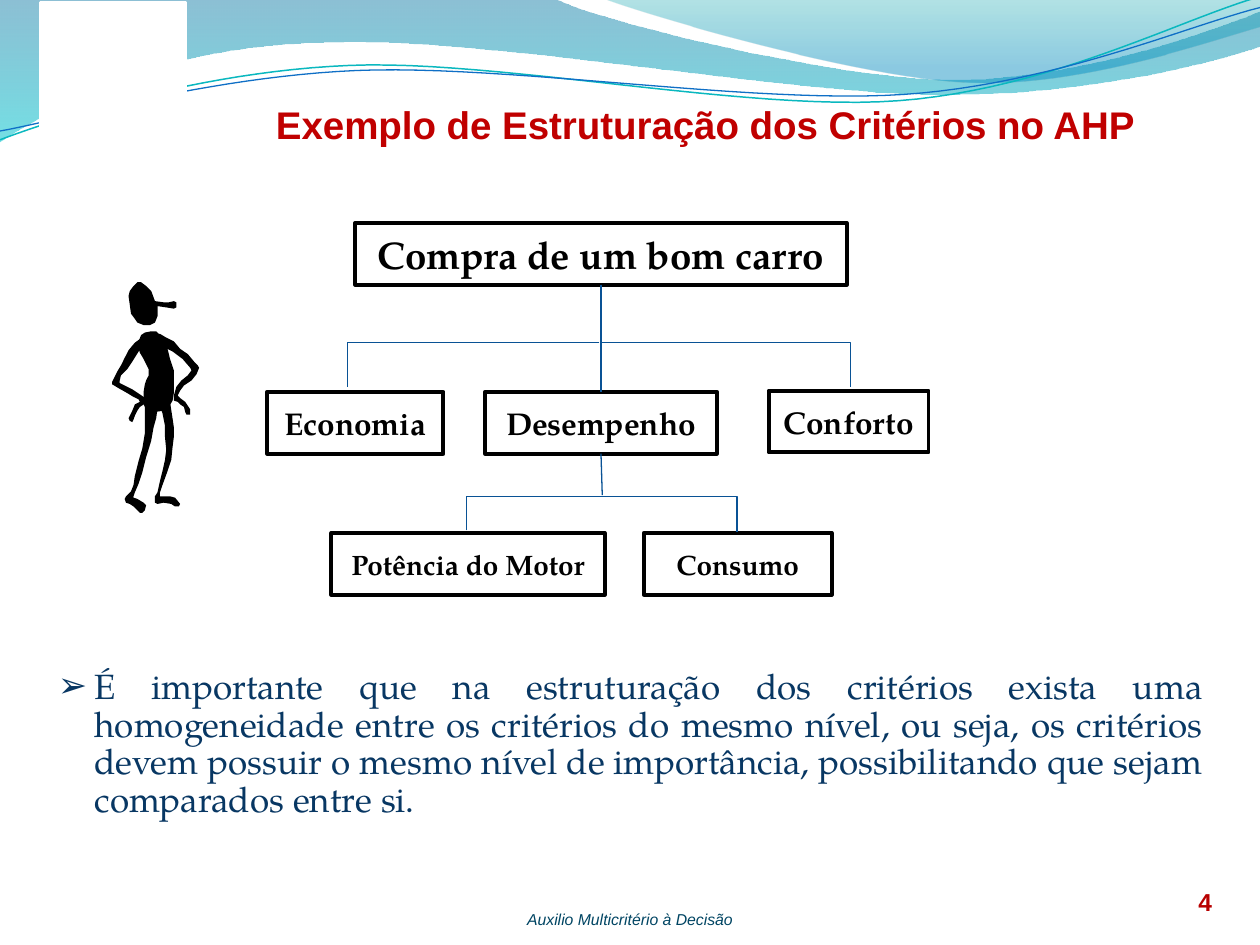
from lxml.etree import SubElement
from pptx import Presentation
from pptx.dml.color import RGBColor
from pptx.enum.shapes import MSO_CONNECTOR as CONNECTOR, MSO_SHAPE as SHAPE
from pptx.enum.text import MSO_ANCHOR as ANCHOR, MSO_AUTO_SIZE as AUTO_SIZE, PP_ALIGN as ALIGN
from pptx.oxml.ns import qn
from pptx.util import Inches, Pt

BLACK = RGBColor(0x00, 0x00, 0x00)
WHITE = RGBColor(0xFF, 0xFF, 0xFF)
RED = RGBColor(0xC0, 0x00, 0x00)
DARK_RED = RGBColor(0xB8, 0x00, 0x00)
NAVY = RGBColor(0x08, 0x37, 0x63)
FOOTER_BLUE = RGBColor(0x00, 0x45, 0x63)
LINK_BLUE = RGBColor(0x09, 0x52, 0x95)
TEAL_LINE = RGBColor(0x0A, 0xB8, 0xBF)
BLUE_LINE = RGBColor(0x0F, 0x6F, 0xC6)
# Gradient stops: position, colour, opacity in percent
WIDE_WAVE = [(0, RGBColor(0x00, 0x74, 0xA1), 45), (1, RGBColor(0x00, 0xC6, 0xCF), 55)]
SMALL_WAVE = [(0, RGBColor(0x00, 0xA1, 0xA9), 30), (0.8, RGBColor(0x00, 0x8B, 0xBF), 45)]
SANS, SERIF = "Arial", "TeX Gyre Pagella"
CURVE_STEPS = 24

# Each wave step is an end point, or two control points and an end point
WIDE_BAND = [(0, -0.01), (4.4, -0.01), (4.76, 0.17, 6.64, 0.63, 7.58, 0.63),
             (8.53, 0.63, 9.58, 0.26, 10, 0.09), (10.01, 0.36),
             (9.83, 0.44, 8.7, 0.76, 7.46, 0.75), (6.22, 0.75, 3.82, 0.28, 2.57, 0.34),
             (1.29, 0.35, 0.46, 0.83, -0.01, 1.13)]
SMALL_BAND = [(4.79, -0.01), (5.09, 0.11, 6.82, 0.62, 7.69, 0.65),
              (8.56, 0.69, 9.61, 0.32, 10, 0.21), (10, 0)]
TEAL_WAVE = [(0, 1.11), (0.48, 0.93, 1.58, 0.57, 2.77, 0.52),
             (3.95, 0.47, 5.93, 0.89, 7.13, 0.8), (8.33, 0.71, 9.38, 0.15, 9.98, -0.02)]
BLUE_WAVE = [(0, 1.04), (0.47, 0.96, 1.64, 0.61, 2.83, 0.56),
             (4.03, 0.51, 5.97, 0.83, 7.17, 0.75), (8.36, 0.67, 9.41, 0.21, 10, 0.06)]

HEAD = [(1.23, 2.39), (1.2, 2.31), (1.16, 2.27), (1.12, 2.24), (1.09, 2.24), (1.06, 2.27),
        (1.03, 2.31), (1.02, 2.35), (1.03, 2.42), (1.04, 2.49), (1.07, 2.53), (1.09, 2.56),
        (1.14, 2.58), (1.19, 2.58), (1.23, 2.56), (1.25, 2.51), (1.25, 2.43), (1.32, 2.44),
        (1.38, 2.45), (1.4, 2.44), (1.4, 2.4), (1.38, 2.39), (1.34, 2.4), (1.3, 2.4)]
TORSO = [(1.12, 2.66), (1.15, 2.64), (1.2, 2.63), (1.24, 2.63), (1.27, 2.66), (1.3, 2.7),
         (1.33, 2.77), (1.35, 2.85), (1.38, 2.94), (1.38, 3.12), (1.37, 3.18), (1.34, 3.23),
         (1.3, 3.26), (1.23, 3.27), (1.19, 3.27), (1.16, 3.25), (1.14, 3.21), (1.14, 3.11),
         (1.15, 3.05), (1.16, 3.02), (1.18, 2.98), (1.18, 2.93), (1.16, 2.89), (1.14, 2.85),
         (1.11, 2.8), (1.1, 2.76), (1.1, 2.71)]
RIGHT_ARM = [(1.32, 2.68), (1.27, 2.65), (1.23, 2.65), (1.23, 2.71), (1.29, 2.75), (1.37, 2.79),
             (1.45, 2.85), (1.51, 2.92), (1.52, 2.94), (1.49, 2.98), (1.44, 3.02), (1.4, 3.07),
             (1.38, 3.14), (1.38, 3.18), (1.41, 3.19), (1.43, 3.21), (1.46, 3.23), (1.47, 3.27),
             (1.48, 3.29), (1.51, 3.29), (1.51, 3.25), (1.47, 3.19), (1.43, 3.16), (1.41, 3.14),
             (1.43, 3.1), (1.46, 3.06), (1.52, 3.02), (1.56, 2.97), (1.58, 2.92), (1.57, 2.9),
             (1.54, 2.87), (1.49, 2.81), (1.43, 2.77), (1.38, 2.71)]
LEFT_ARM = [(1.14, 2.67), (1.07, 2.72), (1.02, 2.78), (0.99, 2.84), (0.96, 2.9), (0.93, 2.95),
            (0.9, 3.01), (0.89, 3.03), (0.89, 3.05), (0.94, 3.08), (1.01, 3.12), (1.06, 3.15),
            (1.1, 3.17), (1.11, 3.19), (1.07, 3.21), (1.05, 3.26), (1.02, 3.32), (1.03, 3.34),
            (1.05, 3.35), (1.06, 3.33), (1.07, 3.3), (1.09, 3.26), (1.11, 3.23), (1.14, 3.21),
            (1.16, 3.19), (1.14, 3.15), (1.11, 3.13), (1.05, 3.09), (0.99, 3.06), (0.95, 3.04),
            (0.95, 3.02), (0.96, 2.98), (1.01, 2.93), (1.05, 2.87), (1.1, 2.79), (1.14, 2.75),
            (1.16, 2.71), (1.17, 2.67)]
LEFT_LEG = [(1.23, 3.18), (1.2, 3.17), (1.17, 3.19), (1.15, 3.22), (1.15, 3.44), (1.13, 3.56),
            (1.1, 3.66), (1.07, 3.78), (1.06, 3.85), (1.04, 3.9), (1, 3.94), (0.99, 3.96),
            (1, 3.99), (1.03, 4), (1.06, 4.02), (1.09, 4.05), (1.11, 4.07), (1.13, 4.07),
            (1.15, 4.05), (1.16, 4.01), (1.14, 3.99), (1.09, 3.96), (1.06, 3.95), (1.06, 3.94),
            (1.07, 3.91), (1.1, 3.84), (1.13, 3.75), (1.16, 3.63), (1.2, 3.5), (1.22, 3.39),
            (1.24, 3.32), (1.25, 3.25)]
RIGHT_LEG = [(1.37, 3.32), (1.35, 3.19), (1.31, 3.15), (1.28, 3.19), (1.27, 3.22), (1.29, 3.28),
             (1.31, 3.38), (1.31, 3.47), (1.32, 3.57), (1.31, 3.65), (1.29, 3.74), (1.27, 3.82),
             (1.25, 3.91), (1.23, 3.94), (1.23, 3.99), (1.25, 4), (1.3, 3.99), (1.36, 4),
             (1.39, 4.02), (1.42, 4.02), (1.43, 4), (1.39, 3.95), (1.35, 3.94), (1.27, 3.94),
             (1.27, 3.91), (1.29, 3.85), (1.33, 3.74), (1.36, 3.65), (1.37, 3.55), (1.38, 3.47),
             (1.38, 3.39)]


def flatten(steps):
    """Turn straight and cubic steps into a list of points."""
    points = [steps[0]]
    for step in steps[1:]:
        if len(step) == 2:
            points.append(step)
            continue
        x0, y0 = points[-1]
        x1, y1, x2, y2, x3, y3 = step
        for index in range(1, CURVE_STEPS + 1):
            t = index / CURVE_STEPS
            a, b, c, d = (1 - t) ** 3, 3 * t * (1 - t) ** 2, 3 * t * t * (1 - t), t ** 3
            points.append((a * x0 + b * x1 + c * x2 + d * x3, a * y0 + b * y1 + c * y2 + d * y3))
    return points


class SlideBuilder:
    def __init__(self, page):
        self.page = page

    def add_text(self, frame, text, size, color, font=SANS, bold=False, italic=False, align=ALIGN.LEFT):
        para = frame.paragraphs[0]
        para.alignment = align
        para.space_before = Pt(0)
        span = para.add_run()
        span.text = text
        span.font.name, span.font.size = font, Pt(size)
        span.font.bold, span.font.italic = bold, italic
        span.font.color.rgb = color
        return para

    def paint(self, shape, fill=None, line=None, width=0.75):
        shape.shadow.inherit = False
        if fill is None:
            shape.fill.background()
        else:
            shape.fill.solid()
            shape.fill.fore_color.rgb = fill
        if line is None:
            shape.line.fill.background()
        else:
            shape.line.color.rgb = line
            shape.line.width = Pt(width)

    def outline(self, steps, closed=False, **style):
        points = [(Inches(x), Inches(y)) for x, y in flatten(steps)]
        builder = self.page.shapes.build_freeform(*points[0])
        builder.add_line_segments(points[1:], close=closed)
        shape = builder.convert_to_shape()
        self.paint(shape, **style)
        return shape

    def wave_band(self, steps, stops):
        band = self.outline(steps, closed=True)
        band.fill.gradient()
        band.fill.gradient_angle = 270
        for stop, (position, color, _) in zip(band.fill.gradient_stops, stops):
            stop.position, stop.color.rgb = position, color
        colors = band.element.spPr.find(qn("a:gradFill")).iter(qn("a:srgbClr"))
        for color, (_, _, opacity) in zip(colors, stops):
            SubElement(color, qn("a:alpha")).set("val", str(opacity * 1000))

    def rectangle(self, left, top, width, height, **style):
        # The line width comes in through line_width, apart from the box width
        box = self.page.shapes.add_shape(SHAPE.RECTANGLE, *map(Inches, (left, top, width, height)))
        style["width"] = style.pop("line_width")
        self.paint(box, **style)
        return box

    def criterion(self, text, left, top, width, size):
        frame = self.rectangle(left, top, width, 0.49, line=BLACK, line_width=2.25).text_frame
        frame.word_wrap = False
        frame.vertical_anchor = ANCHOR.MIDDLE
        self.add_text(frame, text, size, BLACK, SERIF, bold=True, align=ALIGN.CENTER)

    def link(self, *ends):
        line = self.page.shapes.add_connector(CONNECTOR.STRAIGHT, *map(Inches, ends))
        line.line.color.rgb, line.line.width = LINK_BLUE, Pt(0.75)
        SubElement(line._element.spPr, qn("a:effectLst"))

    def label(self, text, left, top, width, height, size, color, inset=None, **style):
        frame = self.page.shapes.add_textbox(*map(Inches, (left, top, width, height))).text_frame
        frame.word_wrap = True
        if inset is not None:
            frame.margin_left = frame.margin_right = Inches(inset)
            frame.margin_top = frame.margin_bottom = Inches(inset)
        return self.add_text(frame, text, size, color, align=ALIGN.CENTER, **style)

    def placeholder(self, box, left, top, width, height):
        box.left, box.top, box.width, box.height = map(Inches, (left, top, width, height))
        frame = box.text_frame
        frame.word_wrap, frame.auto_size = True, AUTO_SIZE.NONE
        frame.vertical_anchor = ANCHOR.TOP
        return frame

    def title(self, text):
        frame = self.placeholder(self.page.shapes.title, 2.09, 0.75, 7.32, 0.33)
        self.add_text(frame, text, 22, RED, bold=True)

    def bullet(self, text):
        frame = self.placeholder(self.page.placeholders[1], 0.36, 5.26, 9.29, 1.31)
        properties = frame.paragraphs[0]._p.get_or_add_pPr()
        properties.set("marL", str(Inches(0.29)))
        properties.set("indent", str(Inches(-0.29)))
        SubElement(properties, qn("a:buChar")).set("char", "➢")
        para = self.add_text(frame, text, 20, NAVY, SERIF, align=ALIGN.JUSTIFY)
        para.line_spacing = 0.9


def main():
    deck = Presentation()
    deck.slide_width, deck.slide_height = Inches(10), Inches(7.5)
    slide = SlideBuilder(deck.slides.add_slide(deck.slide_layouts[1]))

    # Waves, footer and page number
    slide.wave_band(WIDE_BAND, WIDE_WAVE)
    slide.wave_band(SMALL_BAND, SMALL_WAVE)
    slide.outline(TEAL_WAVE, line=TEAL_LINE, width=0.85)
    slide.outline(BLUE_WAVE, line=BLUE_LINE)
    slide.label("Auxilio Multicritério à Decisão", 0, 7.22, 10, 0.15, 9, FOOTER_BLUE, inset=0, italic=True)
    slide.label("4", 9.15, 6.89, 0.83, 0.4, 14, DARK_RED, bold=True).line_spacing = Pt(24)
    slide.rectangle(0.32, 0.02, 1.15, 0.98, fill=WHITE, line=WHITE, line_width=2)

    # Title and text
    slide.title("Exemplo de Estruturação dos Critérios no AHP")
    slide.bullet("É importante que na estruturação dos critérios exista uma homogeneidade entre os "
                 "critérios do mesmo nível, ou seja, os critérios devem possuir o mesmo nível de "
                 "importância, possibilitando que sejam comparados entre si.")

    # Standing figure
    for part in (HEAD, TORSO, RIGHT_ARM, LEFT_ARM, LEFT_LEG, RIGHT_LEG):
        slide.outline(part, closed=True, fill=BLACK)

    # Criteria tree
    for criterion in (("Compra de um bom carro", 2.82, 1.77, 3.9, 22),
                      ("Economia", 2.12, 3.11, 1.4, 18), ("Desempenho", 3.85, 3.11, 1.84, 18),
                      ("Conforto", 6.1, 3.1, 1.27, 18),
                      ("Potência do Motor", 2.63, 4.23, 2.17, 16), ("Consumo", 5.11, 4.23, 1.49, 16)):
        slide.criterion(*criterion)
    slide.link(4.77, 2.26, 4.77, 3.11)
    slide.link(4.77, 3.6, 4.78, 3.93)
    for branch in ([(4.76, 2.72), (6.75, 2.72), (6.75, 3.07)],
                   [(4.75, 2.72), (2.76, 2.72), (2.76, 3.07)],
                   [(3.7, 4.21), (3.7, 3.94), (5.85, 3.94), (5.85, 4.22)]):
        slide.outline(branch, line=LINK_BLUE)

    deck.save("out.pptx")


if __name__ == "__main__":
    main()
